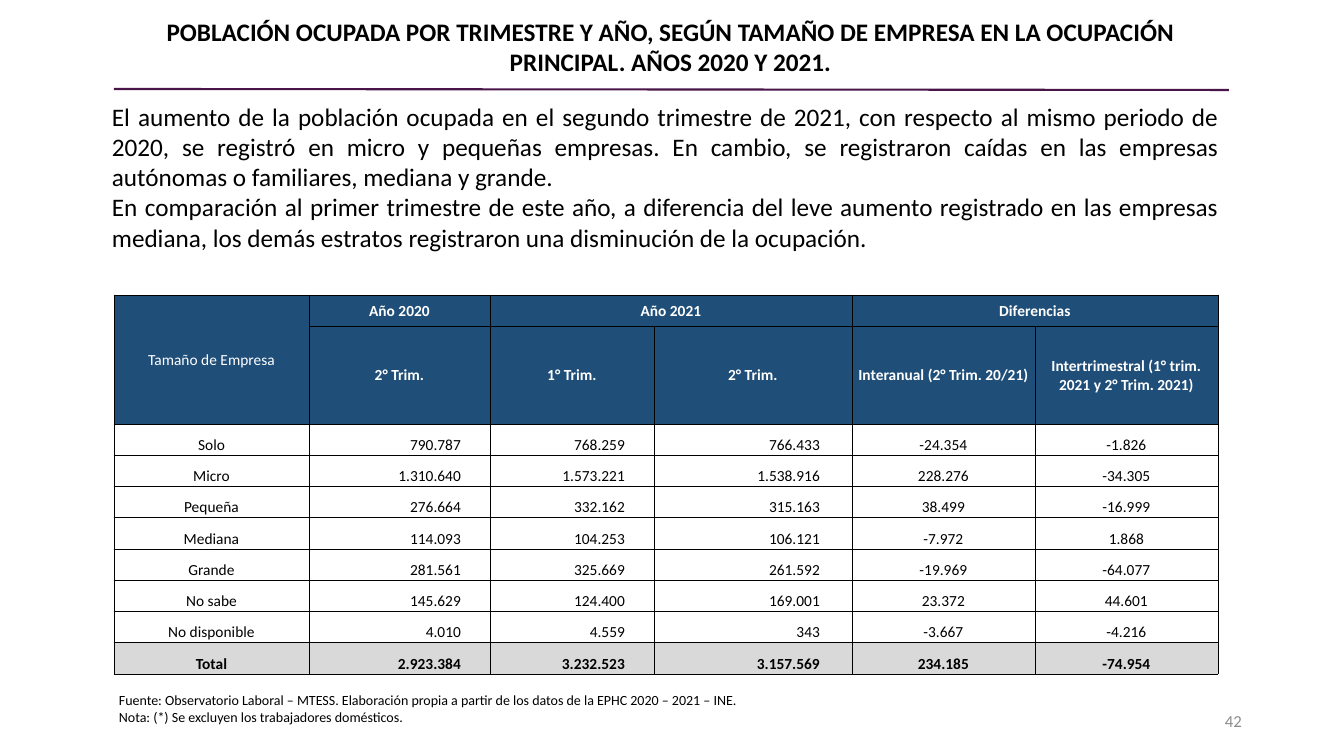
from lxml.etree import SubElement
from pptx import Presentation
from pptx.dml.color import RGBColor
from pptx.enum.shapes import MSO_CONNECTOR as Connector
from pptx.enum.text import MSO_ANCHOR as Anchor, MSO_AUTO_SIZE as AutoSize, PP_ALIGN as Align
from pptx.oxml import parse_xml
from pptx.oxml.ns import nsdecls, qn
from pptx.util import Pt

EMU_PER_PX = 914400 / 100.8
BLACK = RGBColor(0x00, 0x00, 0x00)
WHITE = RGBColor(0xFF, 0xFF, 0xFF)
NAVY = RGBColor(0x1F, 0x4E, 0x78)
PLUM = RGBColor(0x49, 0x14, 0x47)
TOTAL_GRAY = RGBColor(0xD9, 0xD9, 0xD9)
NUMBER_GRAY = RGBColor(0x8C, 0x8C, 0x8C)

TITLE = ("POBLACIÓN OCUPADA POR TRIMESTRE Y AÑO, SEGÚN TAMAÑO DE EMPRESA EN LA OCUPACIÓN "
         "PRINCIPAL. AÑOS 2020 Y 2021.")
FINDINGS = [
    "El aumento de la población ocupada en el segundo trimestre de 2021, con respecto al mismo "
    "periodo de 2020, se registró en micro y pequeñas empresas. En cambio, se registraron caídas "
    "en las empresas autónomas o familiares, mediana y grande.",
    "En comparación al primer trimestre de este año, a diferencia del leve aumento registrado en "
    "las empresas mediana, los demás estratos registraron una disminución de la ocupación.",
]
SOURCES = [
    "Fuente: Observatorio Laboral – MTESS. Elaboración propia a partir de los datos de la "
    "EPHC 2020 – 2021 – INE.",
    "Nota: (*) Se excluyen los trabajadores domésticos.",
]
GROUPS = ["Tamaño de Empresa", "Año 2020", "Año 2021", "", "Diferencias", ""]
PERIODS = ["", "2° Trim.", "1° Trim.", "2° Trim.", "Interanual (2° Trim. 20/21)",
           "Intertrimestral (1° trim. 2021 y 2° Trim. 2021)"]
COMPANY_SIZES = [
    ["Solo", "790.787", "768.259", "766.433", "-24.354", "-1.826"],
    ["Micro", "1.310.640", "1.573.221", "1.538.916", "228.276", "-34.305"],
    ["Pequeña", "276.664", "332.162", "315.163", "38.499", "-16.999"],
    ["Mediana", "114.093", "104.253", "106.121", "-7.972", "1.868"],
    ["Grande", "281.561", "325.669", "261.592", "-19.969", "-64.077"],
    ["No sabe", "145.629", "124.400", "169.001", "23.372", "44.601"],
    ["No disponible", "4.010", "4.559", "343", "-3.667", "-4.216"],
    ["Total", "2.923.384", "3.232.523", "3.157.569", "234.185", "-74.954"],
]
COLUMN_WIDTHS = [195, 181, 164, 198, 183, 183]
ROW_HEIGHTS = [31, 98] + [31, 31, 31, 32] * 2
MERGES = [((0, 0), (1, 0)), ((0, 2), (0, 3)), ((0, 4), (0, 5))]
COUNT_INDENTS = {1: 29, 2: 29, 3: 32}


def px(length):
    return round(length * EMU_PER_PX)


class SlideBuilder:
    """Draws styled elements, measured in px, on one slide."""

    font = "Calibri"

    def __init__(self, deck):
        self.slide = deck.slides.add_slide(deck.slide_layouts[6])

    def add_runs(self, frame, paragraphs, size, color, align, bold=False):
        for index, words in enumerate(paragraphs):
            paragraph = frame.paragraphs[0] if index == 0 else frame.add_paragraph()
            paragraph.alignment = align
            run = paragraph.add_run()
            run.text = words
            run.font.name = self.font
            run.font.size = Pt(size)
            run.font.bold = bold
            run.font.color.rgb = color

    def text(self, box, paragraphs, size, align=Align.LEFT, color=BLACK, bold=False,
             anchor=Anchor.TOP, fit=AutoSize.SHAPE_TO_FIT_TEXT):
        frame = self.slide.shapes.add_textbox(*map(px, box)).text_frame
        frame.word_wrap = True
        frame.auto_size = fit
        frame.vertical_anchor = anchor
        self.add_runs(frame, paragraphs, size, color, align, bold)

    def line(self, ends, color, width):
        rule = self.slide.shapes.add_connector(Connector.STRAIGHT, *map(px, ends))
        rule.line.color.rgb = color
        rule.line.width = Pt(width)
        SubElement(rule._element.spPr, qn("a:effectLst"))

    def borders(self, cell):
        properties = cell._tc.get_or_add_tcPr()
        for index, side in enumerate("LRTB"):
            properties.insert(index, parse_xml(
                f'<a:ln{side} {nsdecls("a")} w="{Pt(0.5)}"><a:solidFill>'
                f'<a:srgbClr val="{BLACK}"/></a:solidFill></a:ln{side}>'))

    def cell(self, cell, words, fill, color, align, anchor, bold, indent):
        cell.margin_left = cell.margin_top = px(1)
        cell.margin_right = px(indent)
        cell.margin_bottom = 0
        cell.vertical_anchor = anchor
        if fill is None:
            cell.fill.background()
        else:
            cell.fill.solid()
            cell.fill.fore_color.rgb = fill
        self.borders(cell)
        if words:
            self.add_runs(cell.text_frame, [words], 11, color, align, bold)

    def table(self, left, top, header, body):
        rows = header + body
        table = self.slide.shapes.add_table(
            len(rows), len(COLUMN_WIDTHS), px(left), px(top),
            px(sum(COLUMN_WIDTHS)), px(sum(ROW_HEIGHTS))).table
        table.first_row = table.horz_banding = False
        for column, width in zip(table.columns, COLUMN_WIDTHS):
            column.width = px(width)
        for row, height in zip(table.rows, ROW_HEIGHTS):
            row.height = px(height)
        for first, last in MERGES:
            table.cell(*first).merge(table.cell(*last))
        for r, row in enumerate(rows):
            for c, words in enumerate(row):
                cell = table.cell(r, c)
                if r < len(header):
                    self.cell(cell, words, NAVY, WHITE, Align.CENTER, Anchor.MIDDLE, c > 0, 1)
                else:
                    total = r == len(rows) - 1
                    align = Align.RIGHT if c in COUNT_INDENTS else Align.CENTER
                    self.cell(cell, words, TOTAL_GRAY if total else None, BLACK, align,
                              Anchor.BOTTOM, total, COUNT_INDENTS.get(c, 1))


def main():
    deck = Presentation()
    deck.slide_width, deck.slide_height = px(1344), px(756)
    builder = SlideBuilder(deck)
    builder.text((102, 11, 1137, 72), [TITLE], 18, Align.CENTER, bold=True)
    builder.line((114, 89, 1229, 90), PLUM, 1.5)
    builder.text((950, 701, 302, 40), ["42"], 12, Align.RIGHT, NUMBER_GRAY,
                 anchor=Anchor.MIDDLE, fit=AutoSize.NONE)
    builder.text((109, 687, 1126, 44), SOURCES, 10)
    builder.text((102, 96, 1127, 163), FINDINGS, 18, Align.JUSTIFY)
    builder.table(114, 295, [GROUPS, PERIODS], COMPANY_SIZES)
    deck.save("out.pptx")


if __name__ == "__main__":
    main()
